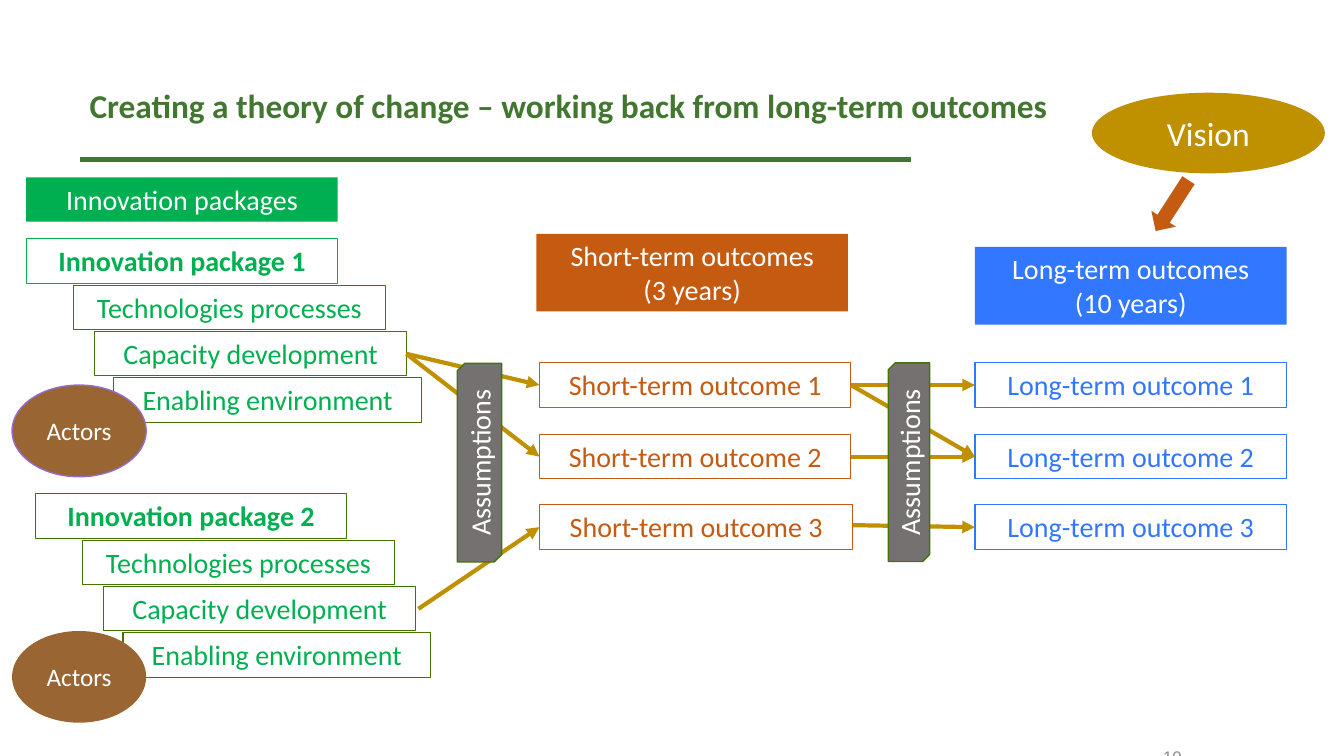
from lxml.etree import SubElement
from pptx import Presentation
from pptx.dml.color import RGBColor
from pptx.enum.shapes import MSO_CONNECTOR, MSO_SHAPE as SHAPE
from pptx.enum.text import MSO_ANCHOR as ANCHOR, PP_ALIGN as ALIGN
from pptx.oxml.ns import qn
from pptx.util import Pt

PX = 9144  # 100 px to the inch

WHITE = RGBColor(0xFF, 0xFF, 0xFF)
GREY = RGBColor(0x8C, 0x8C, 0x8C)
TITLE_GREEN = RGBColor(0x42, 0x77, 0x30)
GREEN = RGBColor(0x00, 0xB0, 0x50)
OLIVE = RGBColor(0x44, 0x74, 0x00)
BLUE = RGBColor(0x31, 0x77, 0xFF)
ORANGE = RGBColor(0xC5, 0x5A, 0x11)
GOLD = RGBColor(0xBF, 0x90, 0x00)
BROWN = RGBColor(0x99, 0x66, 0x33)
PURPLE = RGBColor(0x92, 0x6C, 0xCA)
STONE = RGBColor(0x76, 0x71, 0x71)

BOX_W, BOX_H = 309, 44
OUTCOME_TOPS = (360, 431, 501)
SHORT_X, LONG_X = 535, 967
SHORT_WIDTHS = (309, 309, 311)
STACK_STEPS = (0, 47, 68, 87)
STACK_PITCH = 46


def px(*lengths):
    return [n * PX for n in lengths]


def write(tf, lines, size, color, bold=False, align=ALIGN.CENTER,
          font="Calibri", spacing=None):
    tf.word_wrap = True
    for i, line in enumerate(lines):
        p = tf.add_paragraph() if i else tf.paragraphs[0]
        p.alignment = align
        p.line_spacing = spacing
        r = p.add_run()
        r.text = line
        r.font.name = font
        r.font.size = Pt(size)
        r.font.bold = bold
        r.font.color.rgb = color


def add_text(s, at, line, size, color, anchor, **style):
    tf = s.shapes.add_textbox(*px(*at)).text_frame
    tf.vertical_anchor = anchor
    write(tf, [line], size, color, **style)
    return tf


def add_shape(s, kind, at, fill=None, line=None, width=0.75, rotation=0):
    sp = s.shapes.add_shape(kind, *px(*at))
    sp.shadow.inherit = False
    sp.rotation = rotation
    if fill is None:
        sp.fill.background()
    else:
        sp.fill.solid()
        sp.fill.fore_color.rgb = fill
    if line is None:
        sp.line.fill.background()
    else:
        sp.line.color.rgb = line
        sp.line.width = Pt(width)
    return sp


def add_label(s, kind, at, text, size, fill, **style):
    """Filled shape with white text in its middle."""
    tf = add_shape(s, kind, at, fill, **style).text_frame
    tf.vertical_anchor = ANCHOR.MIDDLE
    write(tf, [text], size, WHITE)


def add_header(s, x, y, h, fill, *lines):
    tf = add_shape(s, SHAPE.RECTANGLE, (x, y, BOX_W, h), fill).text_frame
    tf.vertical_anchor = ANCHOR.TOP
    write(tf, lines, 20, WHITE)


def add_box(s, x, y, text, color, line, w=BOX_W, bold=False):
    sp = add_shape(s, SHAPE.RECTANGLE, (x, y, w, BOX_H), line=line)
    sp.text_frame.vertical_anchor = ANCHOR.TOP
    write(sp.text_frame, [text], 20, color, bold)


def add_package(s, x, y, name, name_line):
    """Stepped stack: package name and its three parts."""
    rows = (
        (name, name_line, BOX_W),
        ("Technologies processes", OLIVE, BOX_W),
        ("Capacity development", OLIVE, BOX_W),
        ("Enabling environment", OLIVE, 305),
    )
    for i, (text, line, w) in enumerate(rows):
        add_box(s, x + STACK_STEPS[i], y + i * STACK_PITCH, text, GREEN, line,
                w, bold=i == 0)


def add_line(s, start, end, color, width, arrow=False):
    c = s.shapes.add_connector(MSO_CONNECTOR.STRAIGHT, *px(*start, *end))
    c.line.color.rgb = color
    c.line.width = Pt(width)
    if arrow:
        SubElement(c.line._get_or_add_ln(), qn("a:tailEnd"), type="triangle")
    SubElement(c._element.spPr, qn("a:effectLst"))


def main():
    prs = Presentation()
    prs.slide_width, prs.slide_height = px(1333, 750)
    s = prs.slides.add_slide(prs.slide_layouts[6])

    add_line(s, (79, 158), (904, 158), TITLE_GREEN, 3.25)
    add_text(s, (979, 731, 203, 40), "10", 12, GREY, ANCHOR.MIDDLE,
             align=ALIGN.RIGHT, font="Arial")
    title = add_text(
        s, (79, 102, 989, 59),
        "Creating a theory of change – working back from long-term outcomes",
        23.8, TITLE_GREEN, ANCHOR.BOTTOM, bold=True, align=ALIGN.LEFT,
        spacing=0.8)
    title.margin_bottom = 37 * PX

    add_header(s, 26, 176, BOX_H, GREEN, "Innovation packages")
    add_header(s, 532, 232, 77, ORANGE, "Short-term outcomes", "(3 years)")
    add_header(s, LONG_X, 245, 77, BLUE, "Long-term outcomes", "(10 years)")
    for i, y in enumerate(OUTCOME_TOPS):
        add_box(s, SHORT_X, y, f"Short-term outcome {i + 1}", ORANGE, ORANGE,
                SHORT_WIDTHS[i])
        add_box(s, LONG_X, y, f"Long-term outcome {i + 1}", BLUE, BLUE)

    add_label(s, SHAPE.OVAL, (1083, 92, 231, 80), "Vision", 24, GOLD)
    add_shape(s, SHAPE.DOWN_ARROW, (1148, 174, 29, 60), ORANGE, rotation=32.9)

    add_package(s, 26, 237, "Innovation package 1", GREEN)
    add_package(s, 35, 490, "Innovation package 2", OLIVE)

    first, second, third = (y + BOX_H // 2 for y in OUTCOME_TOPS)
    for start, end in (
        ((844, first), (LONG_X, first)),
        ((844, first), (LONG_X, second)),
        ((844, second), (LONG_X, second)),
        ((846, 521), (LONG_X, third)),
        ((415, 604), (SHORT_X, third)),
        ((403, 351), (SHORT_X, first)),
        ((403, 351), (SHORT_X, second)),
    ):
        add_line(s, start, end, GOLD, 3, arrow=True)

    for at in ((377, 437, 197, 44), (803, 438, 197, 41)):
        add_label(s, SHAPE.SNIP_2_DIAG_RECTANGLE, at, "Assumptions", 20, STONE,
                  line=OLIVE, width=1, rotation=270)
    for y, line in ((382, PURPLE), (626, None)):
        add_label(s, SHAPE.OVAL, (12, y, 133, 91), "Actors", 18, BROWN,
                  line=line, width=1)

    prs.save("out.pptx")


if __name__ == "__main__":
    main()
